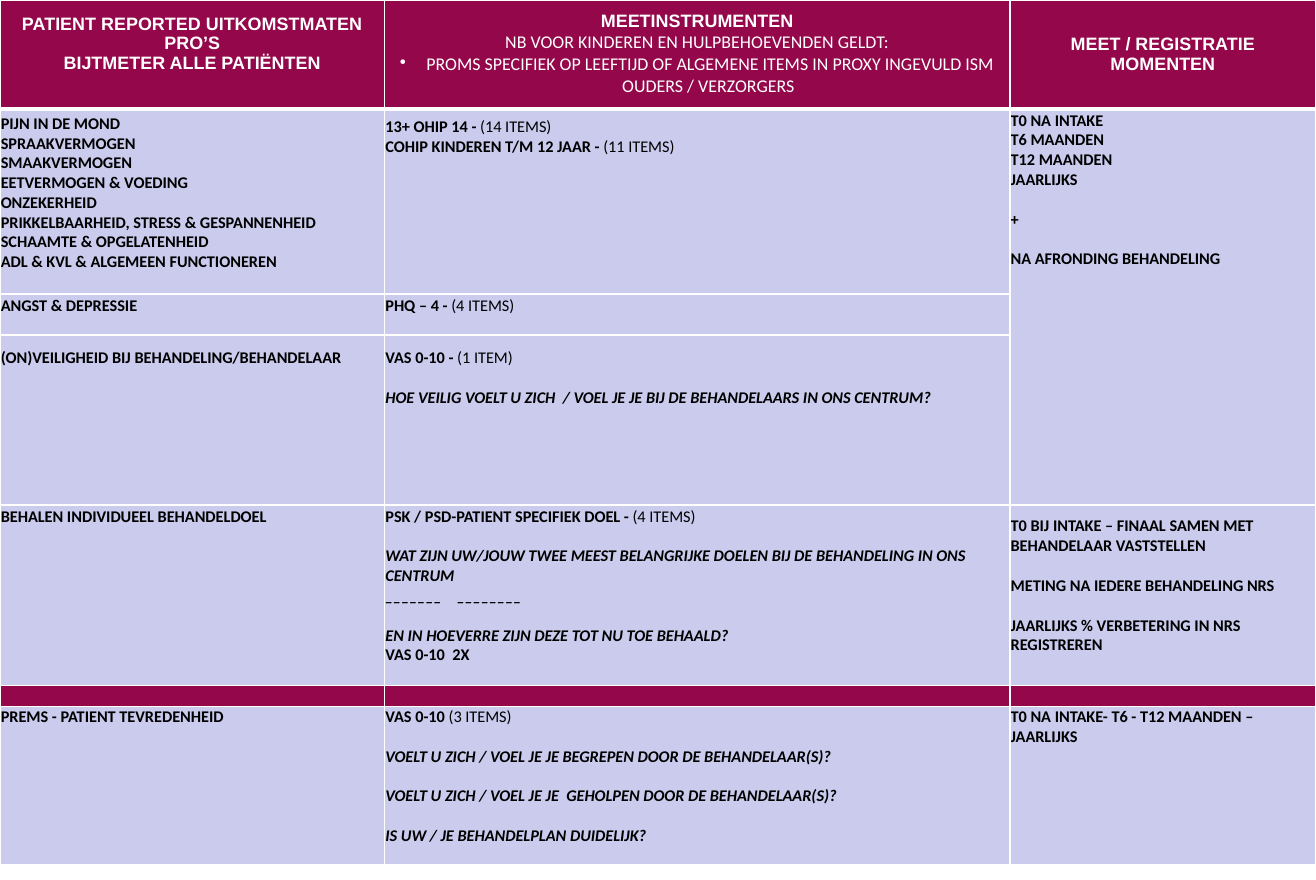
import pptx
import pptx.util
import pptx.dml.color
import pptx.enum.text
import pptx.oxml.ns
from lxml import etree

Pt = pptx.util.Pt
RGBColor = pptx.dml.color.RGBColor
Anchor = pptx.enum.text.MSO_ANCHOR
Align = pptx.enum.text.PP_ALIGN
qn = pptx.oxml.ns.qn

WINE = RGBColor(0x94, 0x08, 0x4B)
LILAC = RGBColor(0xCA, 0xCB, 0xED)
WHITE = RGBColor(0xFF, 0xFF, 0xFF)
BLACK = RGBColor(0, 0, 0)

COLUMNS = [236.1, 383.85, 187.9]
ROWS = [66.9, 113.5, 25.2, 104.4, 110.5, 12.9, 97.4]
SEPARATOR_ROW = 5
LINE = 12.2  # height of one line of body text

BODY = dict(name="Calibri", size=Pt(10), bold=True)
PLAIN = BODY | dict(bold=False)
QUESTION = BODY | dict(italic=True)
HEAD = dict(name="Arial", size=Pt(11), bold=True)
HEAD_NOTE = dict(name="Calibri", size=Pt(11), bold=False)


def para(text, style=BODY, items="", **layout):
    """Describe a paragraph; items is a non-bold ending."""
    return [(text, style)] + ([(items, PLAIN)] if items else []), layout


def spaced(text, style=BODY):
    """Describe a paragraph set one line below the previous one."""
    return para(text, style, space_before=Pt(LINE))


# (row, column): (top margin, paragraphs)
HEADERS = {
    (0, 0): [para("PATIENT REPORTED UITKOMSTMATEN PRO’S", HEAD),
             para("BIJTMETER ALLE PATIËNTEN", HEAD)],
    (0, 1): [para("MEETINSTRUMENTEN", HEAD),
             para("NB VOOR KINDEREN EN HULPBEHOEVENDEN GELDT:", HEAD_NOTE),
             para(" PROMS SPECIFIEK OP LEEFTIJD OF ALGEMENE ITEMS IN PROXY "
                  "INGEVULD ISM OUDERS / VERZORGERS", HEAD_NOTE, bullet="•")],
    (0, 2): [para("MEET / REGISTRATIE", HEAD), para("MOMENTEN", HEAD)],
}
CELLS = {
    (1, 0): (3, [para(t) for t in (
        "PIJN IN DE MOND", "SPRAAKVERMOGEN", "SMAAKVERMOGEN",
        "EETVERMOGEN & VOEDING", "ONZEKERHEID",
        "PRIKKELBAARHEID, STRESS & GESPANNENHEID",
        "SCHAAMTE & OPGELATENHEID", "ADL & KVL & ALGEMEEN FUNCTIONEREN")]),
    (1, 1): (5, [para("13+ OHIP 14 - ", items="(14 ITEMS)"),
                 para("COHIP KINDEREN T/M 12 JAAR - ", items="(11 ITEMS)")]),
    (1, 2): (1, [para("T0 NA INTAKE"), para("T6 MAANDEN"), para("T12 MAANDEN"),
                 para("JAARLIJKS"), spaced("+"),
                 spaced("NA AFRONDING BEHANDELING")]),
    (2, 0): (1, [para("ANGST & DEPRESSIE")]),
    (2, 1): (1, [para("PHQ – 4 - ", items="(4 ITEMS)")]),
    (3, 0): (8, [para("(ON)VEILIGHEID BIJ BEHANDELING/BEHANDELAAR")]),
    (3, 1): (8, [para("VAS 0-10 - ", items="(1 ITEM)"),
                 spaced("HOE VEILIG VOELT U ZICH  / VOEL JE JE BIJ DE "
                        "BEHANDELAARS IN ONS CENTRUM?", QUESTION)]),
    (4, 0): (1, [para("BEHALEN INDIVIDUEEL BEHANDELDOEL")]),
    (4, 1): (1, [para("PSK / PSD-PATIENT SPECIFIEK DOEL - ", items="(4 ITEMS)"),
                 spaced("WAT ZIJN UW/JOUW TWEE MEEST BELANGRIJKE DOELEN BIJ DE "
                        "BEHANDELING IN ONS CENTRUM", QUESTION),
                 para("_______\t________", QUESTION, tab=44),
                 spaced("EN IN HOEVERRE ZIJN DEZE TOT NU TOE BEHAALD?", QUESTION),
                 para("VAS 0-10  2X")]),
    (4, 2): (7, [para("T0 BIJ INTAKE – FINAAL SAMEN MET BEHANDELAAR VASTSTELLEN"),
                 spaced("METING NA IEDERE BEHANDELING NRS"),
                 spaced("JAARLIJKS % VERBETERING IN NRS REGISTREREN")]),
    (6, 0): (0.6, [para("PREMS - PATIENT TEVREDENHEID")]),
    (6, 1): (0.6, [para("VAS 0-10 ", items="(3 ITEMS)"),
                   spaced("VOELT U ZICH / VOEL JE JE BEGREPEN DOOR DE "
                          "BEHANDELAAR(S)?", QUESTION),
                   spaced("VOELT U ZICH / VOEL JE JE  GEHOLPEN DOOR DE "
                          "BEHANDELAAR(S)?", QUESTION),
                   spaced("IS UW / JE BEHANDELPLAN DUIDELIJK?", QUESTION)]),
    (6, 2): (0.6, [para("T0 NA INTAKE- T6 - T12 MAANDEN – JAARLIJKS")]),
}


def apply(target, values):
    for name, value in values.items():
        setattr(target, name, value)


class Deck:
    def __init__(self, width, height):
        self.prs = pptx.Presentation()
        apply(self.prs, dict(slide_width=Pt(width), slide_height=Pt(height)))
        self.s = self.prs.slides.add_slide(self.prs.slide_layouts[6])

    def table(self, columns, rows):
        frame = self.s.shapes.add_table(len(rows), len(columns), 0, 0,
                                        Pt(sum(columns)), Pt(sum(rows)))
        tbl = frame.table
        apply(tbl, dict(first_row=False, horz_banding=False))
        for col, width in zip(tbl.columns, columns):
            col.width = Pt(width)
        for row, height in zip(tbl.rows, rows):
            row.height = Pt(height)
        return tbl

    def cell(self, cell, fill, bottom=1):
        """Give a cell its fill and white borders."""
        tcPr = cell._tc.get_or_add_tcPr()
        for side, width in dict(L=1, R=1, T=1, B=bottom).items():
            ln = etree.SubElement(tcPr, qn("a:ln" + side), w=str(Pt(width)))
            solid = etree.SubElement(ln, qn("a:solidFill"))
            etree.SubElement(solid, qn("a:srgbClr"), val=str(WHITE))
        cell.fill.solid()
        cell.fill.fore_color.rgb = fill

    def empty(self, cell):
        """Keep a cell without text from stretching its row."""
        apply(cell, dict(margin_top=0, margin_bottom=0))
        p = cell.text_frame.paragraphs[0]
        etree.SubElement(p._p, qn("a:endParaRPr"), sz="800")

    def text(self, cell, paragraphs, color, align, **box):
        apply(cell, box)
        tf = cell.text_frame
        for i, (runs, layout) in enumerate(paragraphs):
            p = tf.add_paragraph() if i else tf.paragraphs[0]
            p.alignment = align
            if "space_before" in layout:
                p.space_before = layout["space_before"]
            pPr = p._p.get_or_add_pPr()
            if "bullet" in layout:
                pPr.set("marL", str(Pt(13.7)))
                pPr.set("indent", str(Pt(-13.7)))
                etree.SubElement(pPr, qn("a:buChar"), char=layout["bullet"])
            if "tab" in layout:
                tabs = etree.SubElement(pPr, qn("a:tabLst"))
                etree.SubElement(tabs, qn("a:tab"), pos=str(Pt(layout["tab"])), algn="l")
            for text, style in runs:
                r = p.add_run()
                r.text = text
                apply(r.font, style)
                r.font.color.rgb = color


def main():
    deck = Deck(807.84, 540)
    tbl = deck.table(COLUMNS, ROWS)
    for row in range(len(ROWS)):
        for col in range(len(COLUMNS)):
            fill = WINE if row in (0, SEPARATOR_ROW) else LILAC
            deck.cell(tbl.cell(row, col), fill, bottom=1 if row else 3)
    tbl.cell(1, 2).merge(tbl.cell(3, 2))

    for col in range(len(COLUMNS)):
        deck.empty(tbl.cell(SEPARATOR_ROW, col))
    for place, paragraphs in HEADERS.items():
        deck.text(tbl.cell(*place), paragraphs, WHITE, Align.CENTER,
                  vertical_anchor=Anchor.MIDDLE, margin_left=Pt(5), margin_right=Pt(5),
                  margin_top=Pt(3), margin_bottom=Pt(3))
    apply(tbl.cell(0, 0), dict(vertical_anchor=Anchor.TOP, margin_top=Pt(8.5)))
    for place, (top, paragraphs) in CELLS.items():
        deck.text(tbl.cell(*place), paragraphs, BLACK, Align.LEFT,
                  vertical_anchor=Anchor.TOP, margin_left=Pt(0.5), margin_right=Pt(0.5),
                  margin_top=Pt(top), margin_bottom=0)
    deck.prs.save("out.pptx")


if __name__ == "__main__":
    main()
